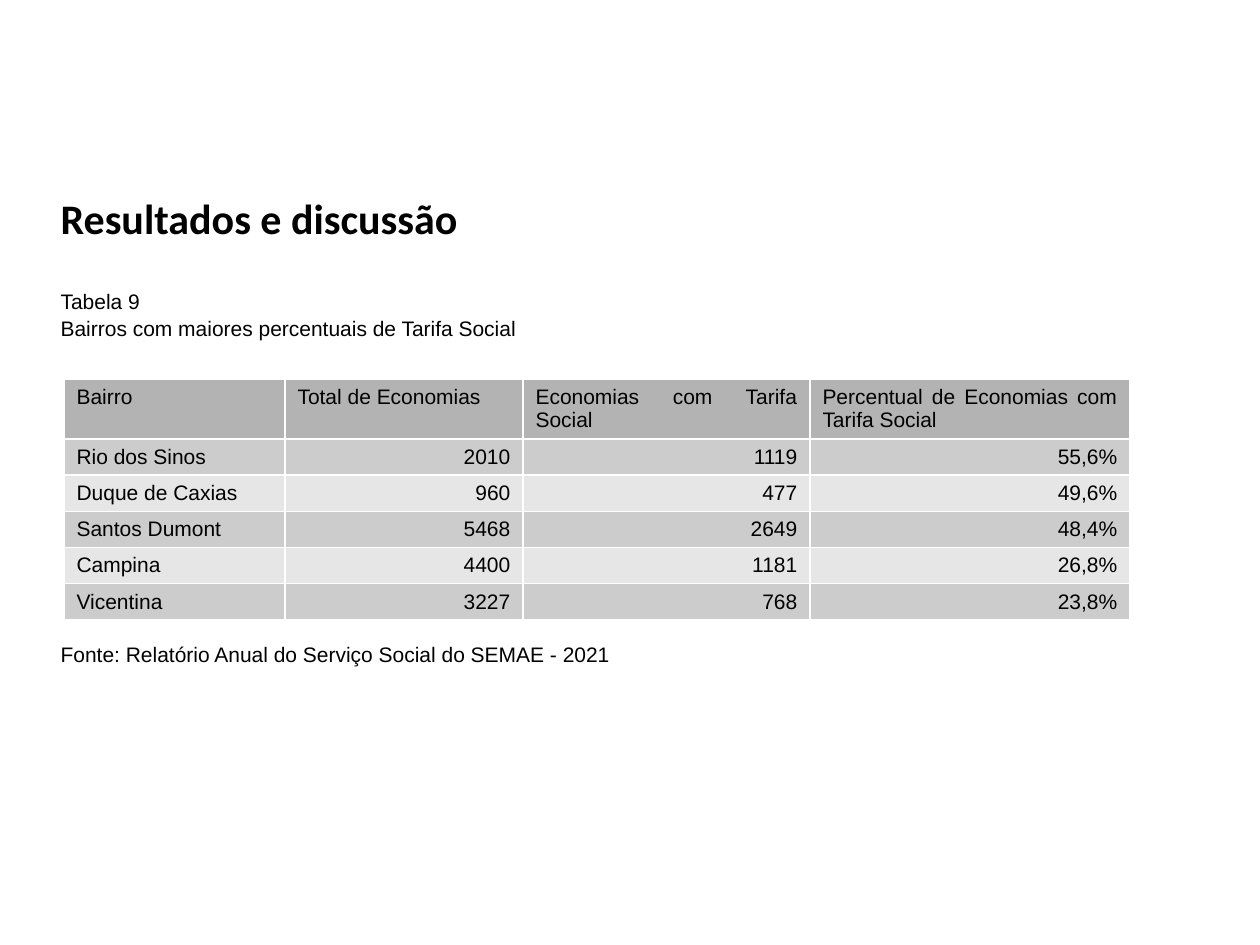
"""Build the slide on neighbourhoods with the highest share of social tariff."""
from lxml.etree import SubElement
from pptx import Presentation
from pptx.dml.color import RGBColor as Rgb
from pptx.enum.text import MSO_ANCHOR as Anchor, MSO_AUTO_SIZE as AutoSize, PP_ALIGN as Align
from pptx.oxml.ns import qn
from pptx.util import Emu, Pt

COLORS = {"text": "000000", "border": "FFFFFF", "header": "B3B3B3",
          "odd": "CCCCCC", "even": "E6E6E6"}
HEADING = {"name": "Calibri", "size": Pt(24), "bold": True}
REGULAR = {"name": "Arial", "size": Pt(12), "bold": False}
FRAME = {"word_wrap": True, "auto_size": AutoSize.NONE}

COLUMN_WIDTHS = [221, 238, 287, 320]
ROW_HEIGHTS = [60] + [36] * 5
TARIFFS = [
    ("Bairro", "Total de Economias", "Economias com Tarifa Social",
     "Percentual de Economias com Tarifa Social"),
    ("Rio dos Sinos", "2010", "1119", "55,6%"),
    ("Duque de Caxias", "960", "477", "49,6%"),
    ("Santos Dumont", "5468", "2649", "48,4%"),
    ("Campina", "4400", "1181", "26,8%"),
    ("Vicentina", "3227", "768", "23,8%"),
]
CAPTION_AND_SOURCE = [
    ("Tabela 9", {"alignment": Align.JUSTIFY}),
    ("Bairros com maiores percentuais de Tarifa Social",
     {"alignment": Align.JUSTIFY, "space_before": Pt(1)}),
    ("Fonte: Relatório Anual do Serviço Social do SEMAE - 2021",
     {"alignment": Align.LEFT, "space_before": Pt(172)}),
]


def px(length):
    return Emu(round(length * 914400 / 126))


def assign(target, values):
    for name, value in values.items():
        setattr(target, name, value)


class SlideBuilder:
    def __init__(self, slide):
        self.slide = slide

    def place(self, holder, left, top, width, height):
        assign(holder, {"left": px(left), "top": px(top),
                        "width": px(width), "height": px(height)})
        assign(holder.text_frame, FRAME)

    def set_text(self, paragraph, wording, font, layout):
        paragraph.text = wording
        assign(paragraph, layout)
        assign(paragraph.font, font)
        paragraph.font.color.rgb = Rgb.from_string(COLORS["text"])

    def title(self, wording, *place):
        heading = self.slide.shapes.title
        self.place(heading, *place)
        heading.text_frame.vertical_anchor = Anchor.MIDDLE
        self.set_text(heading.text_frame.paragraphs[0], wording, HEADING,
                      {"alignment": Align.LEFT})

    def body(self, lines, *place):
        caption = self.slide.placeholders[1]
        self.place(caption, *place)
        frame = caption.text_frame
        for index, (wording, layout) in enumerate(lines):
            line = frame.add_paragraph() if index else frame.paragraphs[0]
            properties = line._p.get_or_add_pPr()
            properties.set("marL", "0")
            properties.set("indent", "0")
            SubElement(properties, qn("a:buNone"))
            self.set_text(line, wording, REGULAR, {"space_before": Pt(0), **layout})

    def borders(self, cell):
        properties = cell._tc.get_or_add_tcPr()
        for position, side in enumerate(("a:lnL", "a:lnR", "a:lnT", "a:lnB")):
            edge = SubElement(properties, qn(side), w=str(Pt(1)))
            properties.insert(position, edge)
            paint = SubElement(edge, qn("a:solidFill"))
            SubElement(paint, qn("a:srgbClr"), val=COLORS["border"])

    def table(self, rows, left, top):
        table = self.slide.shapes.add_table(
            len(rows), len(COLUMN_WIDTHS), px(left), px(top),
            px(sum(COLUMN_WIDTHS)), px(sum(ROW_HEIGHTS))).table
        assign(table, {"first_row": False, "horz_banding": False})
        for column, width in zip(table.columns, COLUMN_WIDTHS):
            column.width = px(width)
        for r, (row, height) in enumerate(zip(table.rows, ROW_HEIGHTS)):
            row.height = px(height)
            shade = "header" if r == 0 else "odd" if r % 2 else "even"
            for c, cell in enumerate(row.cells):
                cell.fill.solid()
                cell.fill.fore_color.rgb = Rgb.from_string(COLORS[shade])
                self.borders(cell)
                side = Align.LEFT if c == 0 else Align.RIGHT if r else Align.JUSTIFY
                self.set_text(cell.text_frame.paragraphs[0], rows[r][c], REGULAR,
                              {"alignment": side})


def main():
    deck = Presentation()
    assign(deck, {"slide_width": px(1260), "slide_height": px(945)})
    builder = SlideBuilder(deck.slides.add_slide(deck.slide_layouts[1]))
    builder.title("Resultados e discussão", 48, 190, 1071, 56)
    builder.body(CAPTION_AND_SOURCE, 48, 282, 1071, 564)
    builder.table(TARIFFS, 64, 379)
    deck.save("out.pptx")


if __name__ == "__main__":
    main()
